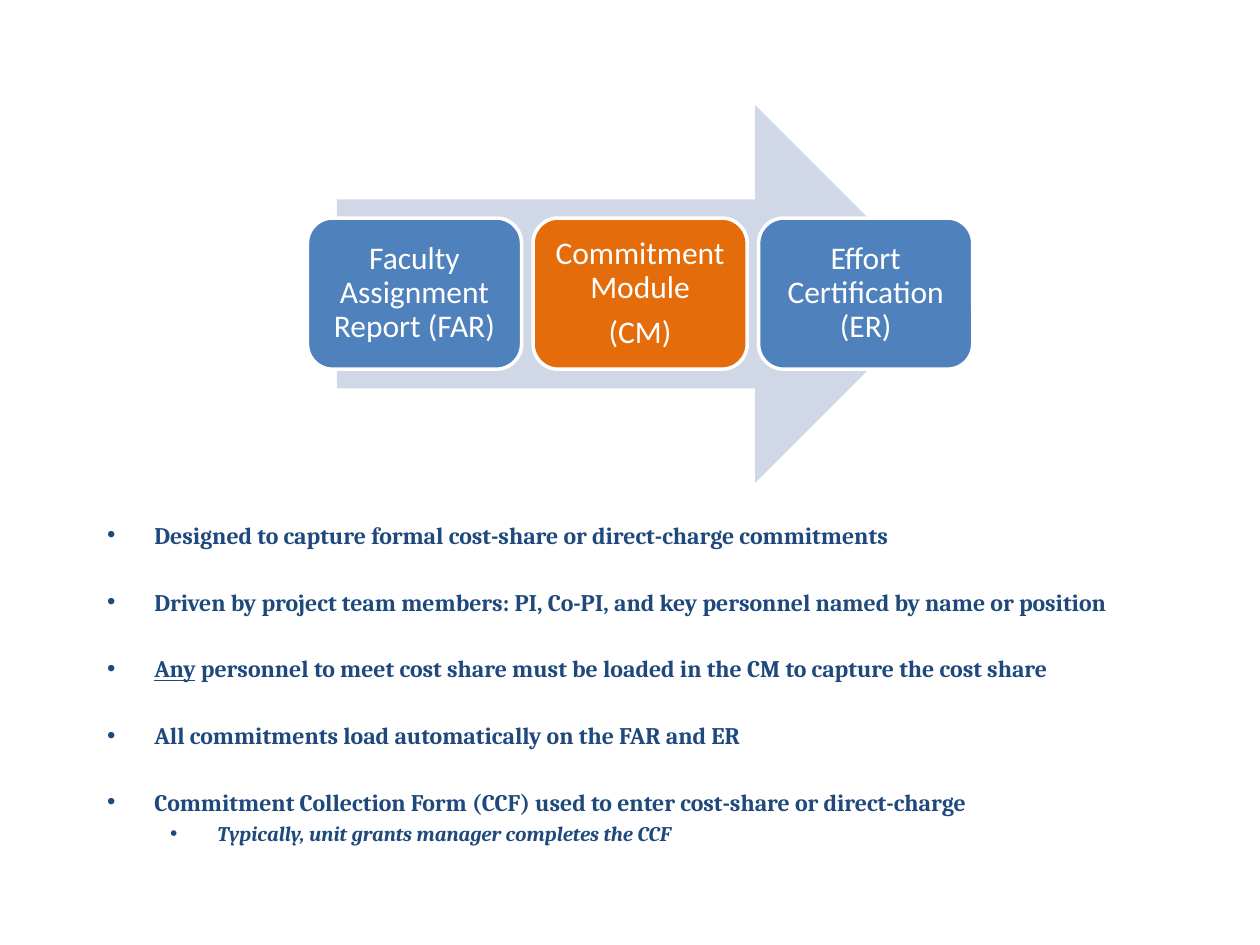
from lxml import etree
from pptx import Presentation
from pptx import util as u
from pptx.dml.color import RGBColor
from pptx.enum import shapes, text
from pptx.oxml.ns import qn

NAVY, BLUE, ORANGE, PALE, WHITE = "1F497D", "4F81BD", "E46C0A", "D0D8E8", "FFFFFF"
STEPS = [
    (["Faculty Assignment Report (FAR)"], BLUE),
    (["Commitment Module", "(CM)"], ORANGE),
    (["Effort Certification (ER)"], BLUE),
]
POINTS = [
    ("", "Designed to capture formal cost-share or direct-charge commitments"),
    ("", "Driven by project team members: PI, Co-PI, and key personnel named by name or position"),
    ("Any", " personnel to meet cost share must be loaded in the CM to capture the cost share"),
    ("", "All commitments load automatically on the FAR and ER"),
    ("", "Commitment Collection Form (CCF) used to enter cost-share or direct-charge"),
]
DETAIL = "Typically, unit grants manager completes the CCF"


def tint(target, color):
    if hasattr(target, "solid"):
        target.solid()
        target.fore_color.rgb = RGBColor.from_string(color)
    else:
        target.color.rgb = RGBColor.from_string(color)


def style(font, name, size, color):
    font.name = name
    font.size = u.Pt(size)
    tint(font, color)


def add_form(slide, kind, box, color):
    form = slide.shapes.add_shape(kind, *map(u.Pt, box))
    form.shadow.inherit = False
    tint(form.fill, color)
    form.line.fill.background()
    return form


def add_step(slide, left, lines, color):
    step = add_form(slide, shapes.MSO_SHAPE.ROUNDED_RECTANGLE, (left, 124.6, 122.4, 86.4), color)
    tint(step.line, WHITE)
    step.line.width = u.Pt(2)
    frame = step.text_frame
    frame.word_wrap = True
    frame.vertical_anchor = text.MSO_ANCHOR.MIDDLE
    frame.margin_left = frame.margin_right = u.Pt(4)
    frame.margin_top = frame.margin_bottom = u.Pt(4)
    frame.text = "\n".join(lines)
    for para in frame.paragraphs:
        para.alignment = text.PP_ALIGN.CENTER
        para.line_spacing = 0.9
        para.space_after = u.Pt(6.3)
        style(para.font, "Calibri", 18, WHITE)


def format_item(para, level, size, line, gap):
    para.level = level
    para.alignment = text.PP_ALIGN.LEFT
    para.line_spacing = u.Pt(line)
    para.space_before = u.Pt(gap)
    props = para._p.get_or_add_pPr()
    props.set("marL", str(u.Pt(27 + 36 * level)))
    props.set("indent", str(u.Pt(-27)))
    etree.SubElement(props, qn("a:buFont")).set("typeface", "Arial")
    etree.SubElement(props, qn("a:buChar")).set("char", "•")
    style(para.font, "Cambria", size, NAVY)
    para.font.bold = True


def add_list(slide):
    body = slide.placeholders[1]
    body.left, body.top, body.width, body.height = map(u.Pt, (54, 294.2, 606.2, 198))
    frame = body.text_frame
    frame.word_wrap = True
    frame.auto_size = text.MSO_AUTO_SIZE.NONE
    frame.vertical_anchor = text.MSO_ANCHOR.TOP
    for i, (lead, rest) in enumerate(POINTS):
        para = frame.add_paragraph() if i else frame.paragraphs[0]
        format_item(para, 0, 13.6, 16, 22.1 if i else 2)
        if lead:
            run = para.add_run()
            run.text = lead
            run.font.underline = True
        para.add_run().text = rest
    para = frame.add_paragraph()
    format_item(para, 1, 11.9, 14, 3)
    para.font.italic = True
    para.add_run().text = DETAIL


def main():
    deck = Presentation()
    deck.slide_width, deck.slide_height = u.Pt(720), u.Pt(540)
    slide = deck.slides.add_slide(deck.slide_layouts[0])
    title = slide.shapes.title.element
    title.getparent().remove(title)
    add_list(slide)
    add_form(slide, shapes.MSO_SHAPE.RIGHT_ARROW, (192.5, 60, 347, 216), PALE)
    for i, (lines, color) in enumerate(STEPS):
        add_step(slide, 175.7 + 128.9 * i, lines, color)
    deck.save("out.pptx")


if __name__ == "__main__":
    main()
